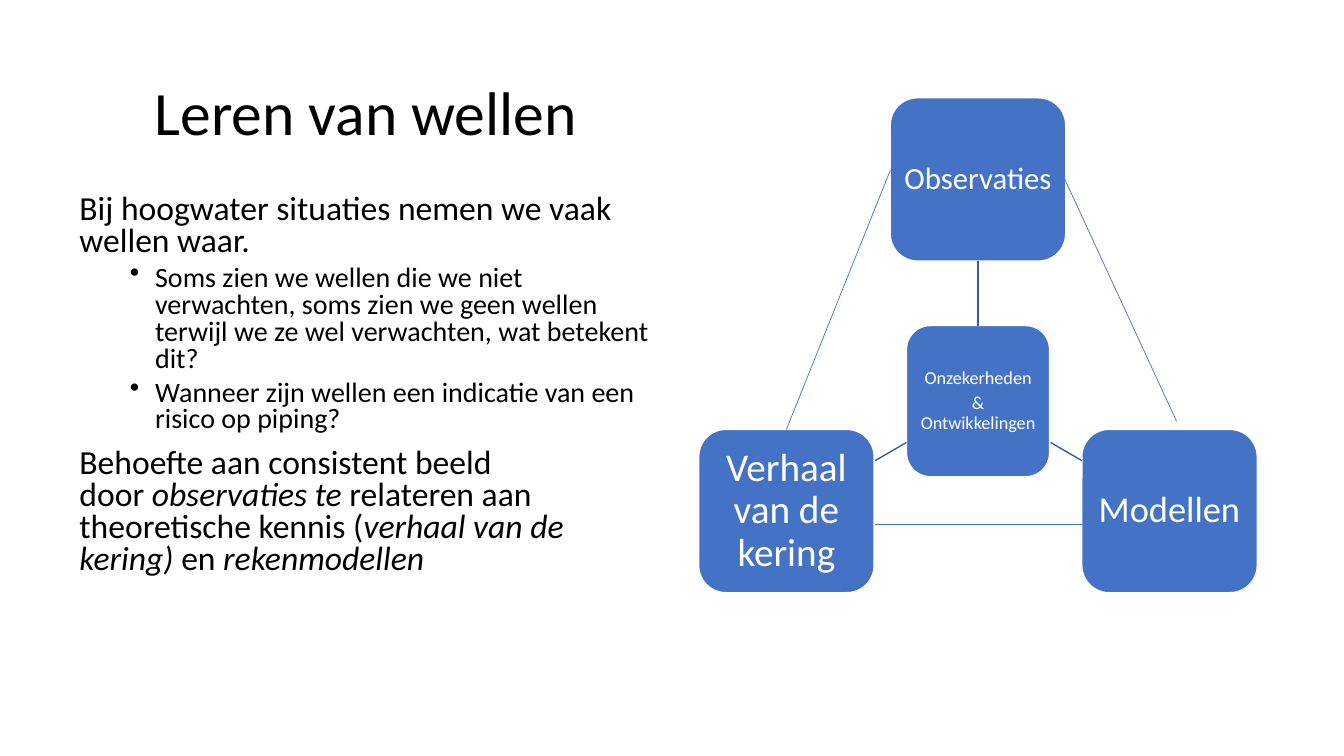
from dataclasses import dataclass
from typing import Optional

from lxml import etree
from pptx import Presentation
from pptx import util as u
from pptx.dml.color import RGBColor
from pptx.enum import shapes, text
from pptx.oxml.ns import qn

PX = 9144  # 100 px to the inch
FONT = "Calibri"
BLACK, WHITE, BLUE, DARK_BLUE = "000000", "FFFFFF", "4472C4", "365B9D"
TOP, BOTTOM = 0, 2
NBSP = chr(160)


@dataclass(frozen=True)
class Node:
    name: str
    box: tuple[int, int, int, int]
    lines: tuple[str, ...]
    size: int
    inset: int


@dataclass(frozen=True)
class Link:
    """A line whose ends may be joined to a (node name, side)."""
    start: tuple[int, int]
    end: tuple[int, int]
    color: str
    width: float
    start_at: Optional[tuple[str, int]] = None
    end_at: Optional[tuple[str, int]] = None


@dataclass(frozen=True)
class BodyItem:
    runs: tuple[tuple[str, bool], ...]  # text, italic
    size: int = 24
    before: int = 10
    bullet: bool = False


NODES = (
    Node("centre", (899, 323, 142, 150), ("Onzekerheden", "& Ontwikkelingen"), 13, 4),
    Node("observations", (883, 97, 174, 162), ("Observaties",), 22, 5),
    Node("models", (1073, 426, 174, 162), ("Modellen",), 26, 7),
    Node("story", (693, 426, 174, 162), ("Verhaal van de kering",), 28, 8),
)

LINKS = (
    Link((970, 323), (970, 259), DARK_BLUE, 1, ("centre", TOP), ("observations", BOTTOM)),
    Link((1042, 439), (1073, 457), DARK_BLUE, 1),
    Link((899, 439), (868, 457), DARK_BLUE, 1),
    Link((883, 169), (782, 426), BLUE, 0.5, end_at=("story", TOP)),
    Link((1052, 169), (1167, 418), BLUE, 0.5),
    Link((868, 520), (1078, 520), BLUE, 0.5),
)

BODY = (
    BodyItem((("Bij hoogwater situaties nemen we vaak wellen waar." + NBSP, False),), before=0),
    BodyItem((("Soms zien we wellen die we niet verwachten, soms zien we geen wellen "
               "terwijl we ze wel verwachten, wat betekent dit?", False),), 20, 5, True),
    BodyItem((("Wanneer zijn wellen een indicatie van een risico op piping?", False),), 20, 5, True),
    BodyItem((
        (f"Behoefte aan consistent beeld door{NBSP}", False),
        (f"observaties te{NBSP}", True),
        ("relateren aan theoretische kennis (", False),
        ("verhaal van de kering)", True),
        (" en ", False),
        ("rekenmodellen", True),
    )),
)


def rgb(color: str) -> RGBColor:
    return RGBColor.from_string(color)


def px(*lengths: int) -> list[int]:
    return [length * PX for length in lengths]


def add_run(paragraph, words: str, *, size: int, color: str, italic: bool = False) -> None:
    run = paragraph.add_run()
    run.text = words
    run.font.name = FONT
    run.font.size = u.Pt(size)
    run.font.italic = italic
    run.font.color.rgb = rgb(color)


def next_paragraph(frame, index: int):
    return frame.paragraphs[0] if index == 0 else frame.add_paragraph()


def add_bullet(paragraph) -> None:
    properties = paragraph._p.get_or_add_pPr()
    properties.set("marL", str(75 * PX))
    properties.set("indent", str(-25 * PX))
    etree.SubElement(properties, qn("a:buChar"), char="•")


def set_title(slide) -> None:
    title = slide.shapes.title
    title.left, title.top, title.width, title.height = px(69, 42, 588, 146)
    frame = title.text_frame
    frame.auto_size = text.MSO_AUTO_SIZE.NONE
    frame.vertical_anchor = text.MSO_ANCHOR.MIDDLE
    paragraph = frame.paragraphs[0]
    paragraph.alignment = text.PP_ALIGN.CENTER
    paragraph.line_spacing = 0.9
    add_run(paragraph, "Leren van wellen", size=44, color=BLACK)


def add_body(slide) -> None:
    frame = slide.shapes.add_textbox(*px(69, 188, 597, 409)).text_frame
    frame.word_wrap = True
    for index, item in enumerate(BODY):
        paragraph = next_paragraph(frame, index)
        paragraph.line_spacing = 0.8
        paragraph.space_before = u.Pt(item.before)
        if item.bullet:
            paragraph.level = 1
            add_bullet(paragraph)
        for words, italic in item.runs:
            add_run(paragraph, words, size=item.size, color=BLACK, italic=italic)


def add_node(slide, node: Node):
    shape = slide.shapes.add_shape(shapes.MSO_SHAPE.ROUNDED_RECTANGLE, *px(*node.box))
    shape.shadow.inherit = False
    shape.fill.solid()
    shape.fill.fore_color.rgb = rgb(BLUE)
    shape.line.color.rgb = rgb(WHITE)
    shape.line.width = u.Pt(1)
    frame = shape.text_frame
    frame.word_wrap = True
    frame.vertical_anchor = text.MSO_ANCHOR.MIDDLE
    frame.margin_left = frame.margin_right = node.inset * PX
    frame.margin_top = frame.margin_bottom = node.inset * PX
    for index, line in enumerate(node.lines):
        paragraph = next_paragraph(frame, index)
        paragraph.alignment = text.PP_ALIGN.CENTER
        paragraph.line_spacing = 0.9
        paragraph.space_after = u.Pt(round(node.size * 0.3))
        add_run(paragraph, line, size=node.size, color=WHITE)
    return shape


def add_link(slide, link: Link, nodes: dict) -> None:
    connector = slide.shapes.add_connector(
        shapes.MSO_CONNECTOR.STRAIGHT, *px(*link.start, *link.end))
    if link.start_at:
        name, side = link.start_at
        connector.begin_connect(nodes[name], side)
    if link.end_at:
        name, side = link.end_at
        connector.end_connect(nodes[name], side)
    connector.line.color.rgb = rgb(link.color)
    connector.line.width = u.Pt(link.width)
    etree.SubElement(connector._element.spPr, qn("a:effectLst"))


def main() -> None:
    presentation = Presentation()
    presentation.slide_width, presentation.slide_height = px(1333, 750)
    slide = presentation.slides.add_slide(presentation.slide_layouts.get_by_name("Title Only"))
    set_title(slide)
    add_body(slide)
    nodes = {node.name: add_node(slide, node) for node in NODES}
    for link in LINKS:
        add_link(slide, link, nodes)
    presentation.save("out.pptx")


if __name__ == "__main__":
    main()
